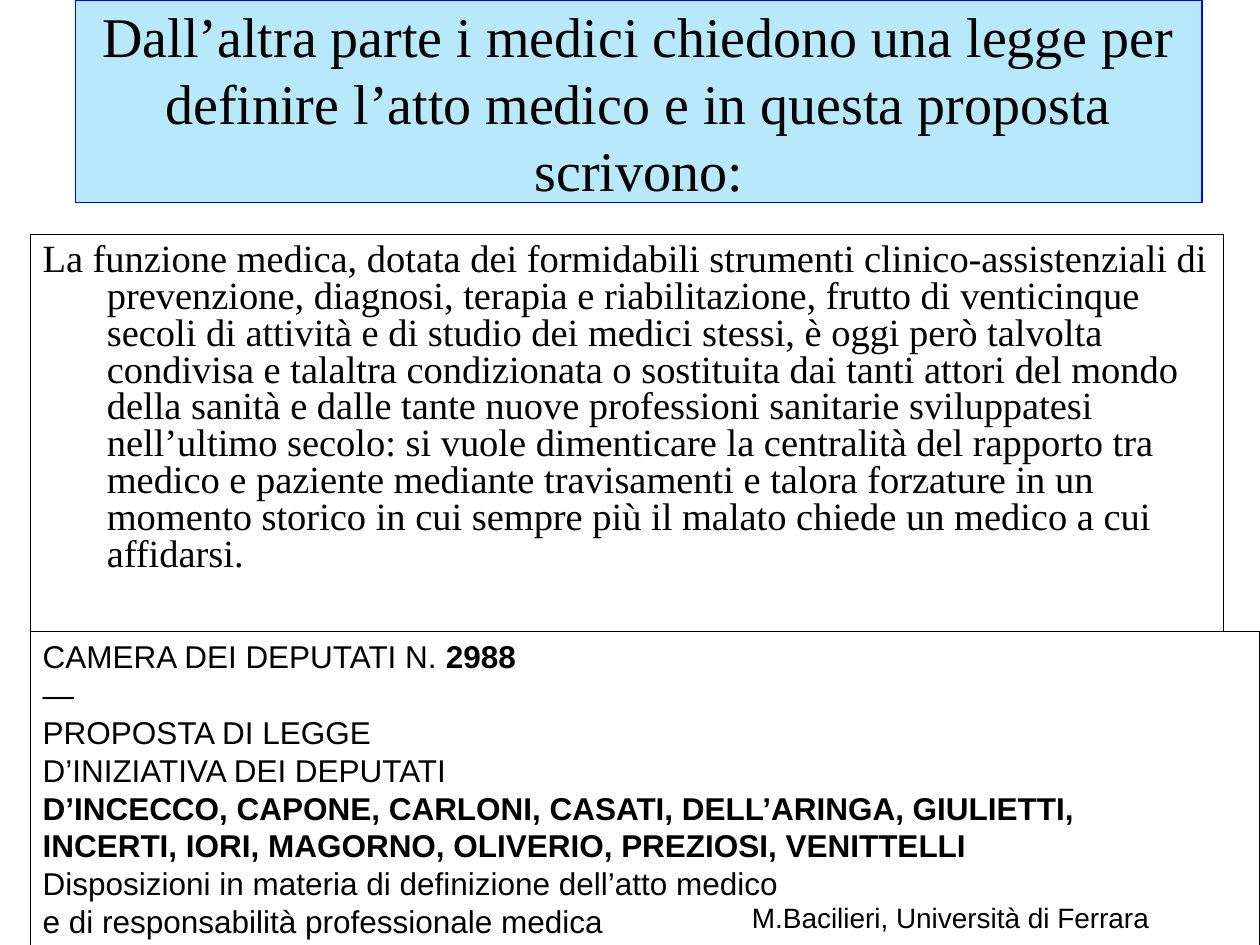
import pptx
import pptx.util
import pptx.dml.color
import pptx.enum.shapes
import pptx.enum.text

Inches, Pt = pptx.util.Inches, pptx.util.Pt
ALIGN = pptx.enum.text.PP_ALIGN
SERIF, SANS = "Times New Roman", "Arial"


def color(value):
    return pptx.dml.color.RGBColor.from_string(value)


def fill_text(sp, paragraphs, font, size, spacing=None, align=ALIGN.LEFT):
    """Write paragraphs, each a list of (text, bold) runs."""
    tf = sp.text_frame
    tf.word_wrap = True
    for i, runs in enumerate(paragraphs):
        p = tf.paragraphs[0] if i == 0 else tf.add_paragraph()
        p.alignment = align
        if spacing:
            p.line_spacing = Pt(spacing)
        for text, bold in runs:
            r = p.add_run()
            r.text = text
            r.font.name = font
            r.font.size = Pt(size)
            r.font.bold = bold
            r.font.color.rgb = color("000000")
    return tf


prs = pptx.Presentation()
prs.slide_width, prs.slide_height = Inches(10), Inches(7.5)
s = prs.slides.add_slide(prs.slide_layouts[6])

# Framed boxes: title, quotation, bill
boxes = []
for x, y, w, h, fill, line in (
    (0.6, 0, 8.94, 1.61, "B8E9FA", "0000FF"),
    (0.24, 1.86, 9.47, 3.16, "FFFFFF", "000000"),
    (0.24, 5.01, 9.76, 2.51, "FFFFFF", "000000"),
):
    sp = s.shapes.add_shape(pptx.enum.shapes.MSO_SHAPE.RECTANGLE,
                            Inches(x), Inches(y), Inches(w), Inches(h))
    sp.shadow.inherit = False
    sp.fill.solid()
    sp.fill.fore_color.rgb = color(fill)
    sp.line.color.rgb = color(line)
    sp.line.width = Pt(0.75)
    sp.text_frame.vertical_anchor = pptx.enum.text.MSO_ANCHOR.TOP
    boxes.append(sp)
title, quote, bill = boxes

# Title
tf = fill_text(title, [[("Dall’altra parte i medici chiedono una legge per definire "
                         "l’atto medico e in questa proposta scrivono:", False)]],
               SERIF, 32, 38.3, ALIGN.CENTER)
tf.vertical_anchor = pptx.enum.text.MSO_ANCHOR.BOTTOM
tf.margin_left = tf.margin_right = Inches(0.05)
tf.margin_top = tf.margin_bottom = 0

# Quotation with a hanging indent
tf = fill_text(quote, [[(
    "La funzione medica, dotata dei formidabili strumenti clinico-assistenziali di "
    "prevenzione, diagnosi, terapia e riabilitazione, frutto di venticinque secoli di "
    "attività e di studio dei medici stessi, è oggi però talvolta condivisa e talaltra "
    "condizionata o sostituita dai tanti attori del mondo della sanità e dalle tante "
    "nuove professioni sanitarie sviluppatesi nell’ultimo secolo: si vuole dimenticare "
    "la centralità del rapporto tra medico e paziente mediante travisamenti e talora "
    "forzature in un momento storico in cui sempre più il malato chiede un medico a cui "
    "affidarsi.", False)]], SERIF, 22, 21.1)
tf.margin_left, tf.margin_right = Inches(0.1), Inches(0.05)
tf.margin_top, tf.margin_bottom = Inches(0.07), 0
pPr = tf.paragraphs[0]._p.get_or_add_pPr()
pPr.set("marL", str(Inches(0.51)))
pPr.set("indent", str(-Inches(0.51)))

# Bill
fill_text(bill, [
    [("CAMERA DEI DEPUTATI N. ", False), ("2988", True)],
    [("—", False)],
    [("PROPOSTA DI LEGGE", False)],
    [("D’INIZIATIVA DEI DEPUTATI", False)],
    [("D’INCECCO, CAPONE, CARLONI, CASATI, DELL’ARINGA, GIULIETTI,", True)],
    [("INCERTI, IORI, MAGORNO, OLIVERIO, PREZIOSI, VENITTELLI", True)],
    [("Disposizioni in materia di definizione dell’atto medico", False)],
    [("e di responsabilità professionale medica", False)],
], SANS, 18, 21.6)

# Author
author = s.shapes.add_textbox(Inches(5.87), Inches(7.1), Inches(4.13), Inches(0.37))
fill_text(author, [[("M.Bacilieri, Università di Ferrara", False)]], SANS, 16)

prs.save("out.pptx")
